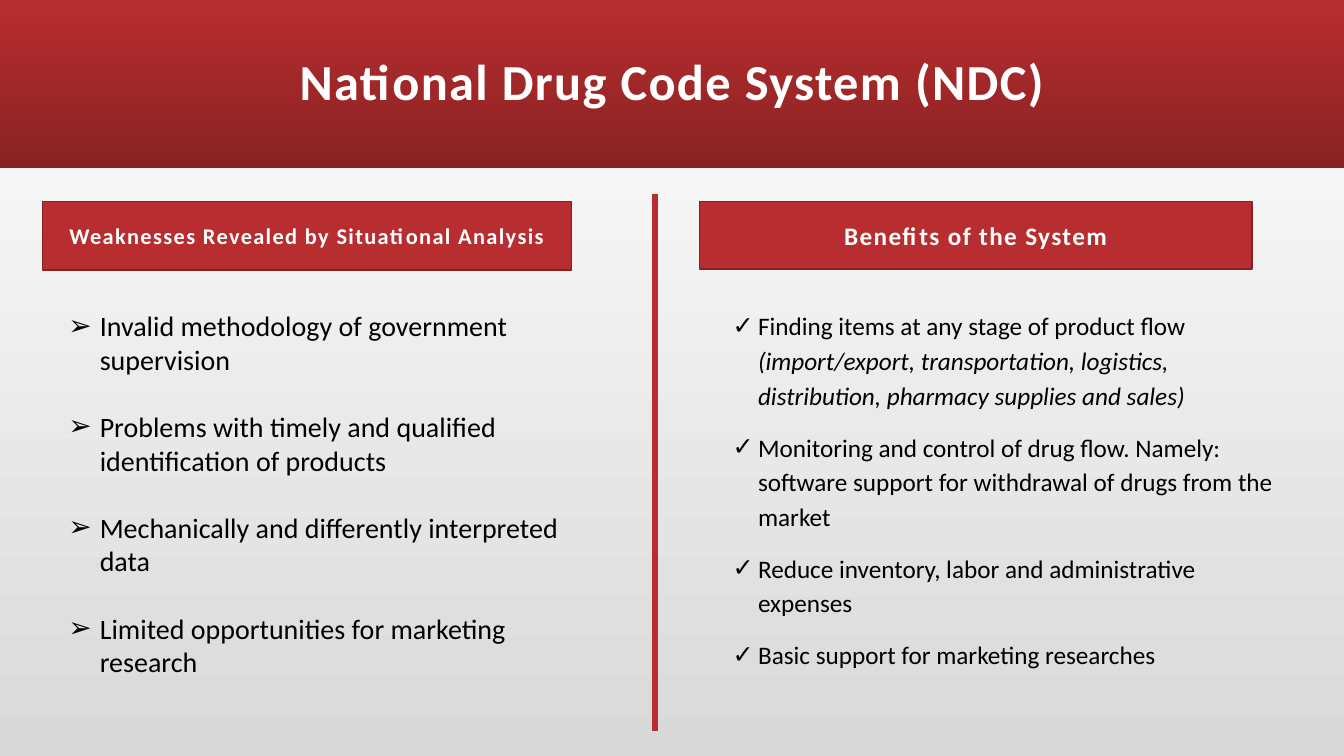
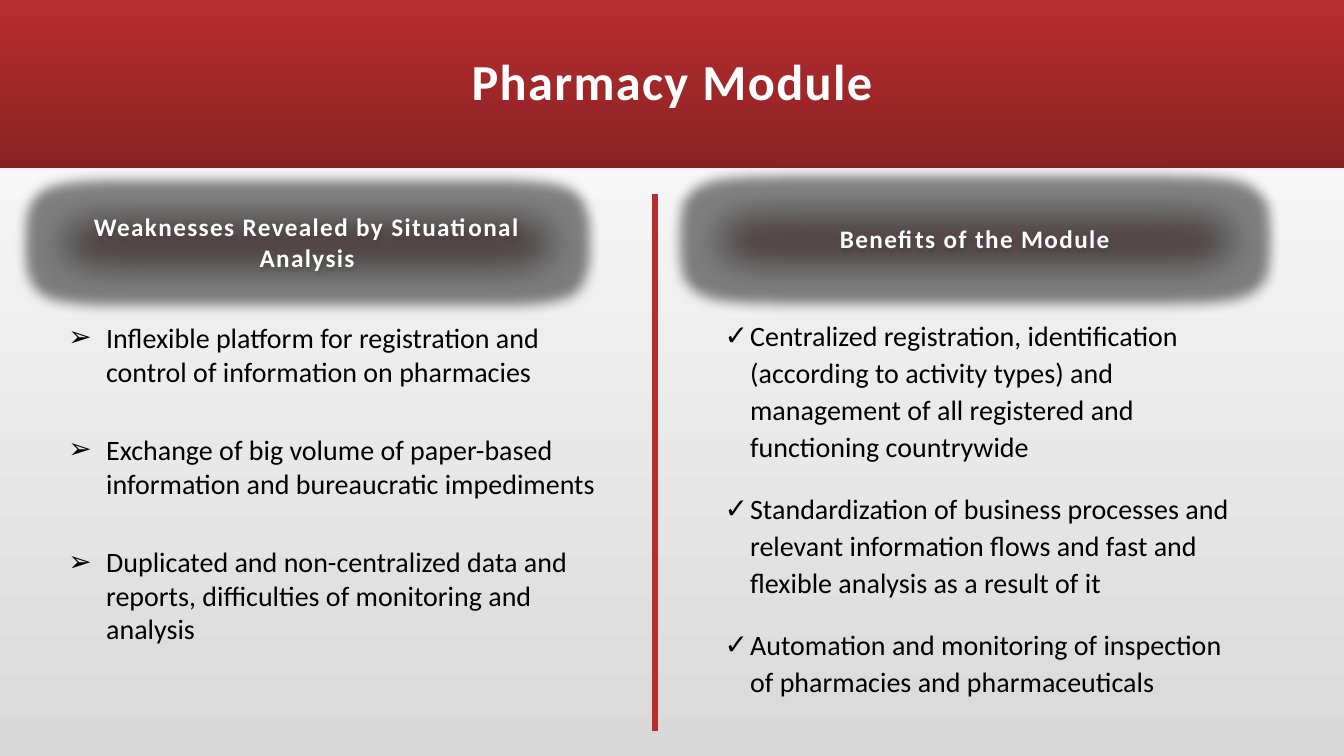
import pptx
import pptx.util
import pptx.dml.color
import pptx.enum.shapes
import pptx.enum.text
import pptx.oxml
import pptx.oxml.ns

Cm = pptx.util.Cm
Pt = pptx.util.Pt
FONT = "Calibri"
RED, DARK, EDGE = "B82D2F", "8A2223", "882123"
WHITE, BLACK, GREY = "FFFFFF", "000000", "D9D9D9"
WIDE, HIGH, BAND = 33.87, 19.05, 4.23
NS = pptx.oxml.ns.nsdecls("a")
CENTER = pptx.enum.text.PP_ALIGN.CENTER
MIDDLE = pptx.enum.text.MSO_ANCHOR.MIDDLE

HALO = """
<a:glow rad="228600"><a:srgbClr val="000000"><a:alpha val="40000"/></a:srgbClr></a:glow>
<a:outerShdw blurRad="44450" dist="27940" dir="5400000" algn="ctr">
<a:srgbClr val="000000"><a:alpha val="32000"/></a:srgbClr></a:outerShdw>
<a:softEdge rad="317500"/>"""

PAGES = [
    {
        "title": "National Drug Code System (NDC)",
        "halo": False,
        "heads": [
            ("Weaknesses Revealed by Situational Analysis", (1.07, 5.08, 13.34, 1.73), 16),
            ("Benefits of the System", (17.63, 5.08, 13.92, 1.7), 18),
        ],
        "lists": [
            {
                "box": (1.47, 7.65, 12.9, 9.65),
                "look": {"mark": "➢", "size": 20, "indent": 0.79, "gap": 24, "lead": 1},
                "items": [
                    "Invalid methodology of government supervision",
                    "Problems with timely and qualified identification of products",
                    "Mechanically and differently interpreted data",
                    "Limited opportunities for marketing research",
                ],
            },
            {
                "box": (18.21, 7.59, 14.17, 10.19),
                "look": {"mark": "✓", "size": 18, "indent": 0.64, "gap": 12, "lead": 1.15},
                "items": [
                    ("Finding items at any stage of product flow ",
                     "(import/export, transportation, logistics, distribution, "
                     "pharmacy supplies and sales)"),
                    "Monitoring and control of drug flow. Namely: software support "
                    "for withdrawal of drugs from the market",
                    "Reduce inventory, labor and administrative expenses",
                    "Basic support for marketing researches",
                ],
            },
        ],
    },
    {
        "title": "Pharmacy Module",
        "halo": True,
        "heads": [
            ("Weaknesses Revealed by Situational Analysis", (1.07, 5.16, 13.34, 1.88), 18),
            ("Benefits of the Module", (17.6, 5.08, 13.94, 1.88), 18),
        ],
        "lists": [
            {
                "box": (1.47, 7.95, 13.79, 10.97),
                "look": {"mark": "➢", "size": 20, "indent": 0.95, "gap": 32, "lead": 1},
                "items": [
                    "Inflexible platform for registration and control of information "
                    "on pharmacies",
                    "Exchange of big volume of paper-based information and "
                    "bureaucratic impediments",
                    "Duplicated and non-centralized data and reports, difficulties "
                    "of monitoring and analysis",
                ],
            },
            {
                "box": (18.01, 7.82, 13.69, 10.16),
                "look": {"mark": "✓", "size": 20, "indent": 0.64, "gap": 18, "lead": 1.1},
                "items": [
                    "Centralized registration, identification (according to activity "
                    "types) and management of all registered and functioning countrywide",
                    "Standardization of business processes and relevant information "
                    "flows and fast and flexible analysis as a result of it",
                    "Automation and monitoring of inspection of pharmacies and "
                    "pharmaceuticals",
                ],
            },
        ],
    },
]


def color(code):
    return pptx.dml.color.RGBColor.from_string(code)


def place(shape, box):
    shape.left, shape.top, shape.width, shape.height = map(Cm, box)


def shade(fill, first, last, angle):
    """Fill with a two-stop gradient; the angle runs counter-clockwise."""
    fill.gradient()
    fill.gradient_angle = angle
    for stop, code in zip(fill.gradient_stops, (first, last)):
        stop.color.rgb = color(code)


def style(para, size, code, bold=False):
    for run in para.runs:
        font = run.font
        font.name, font.size, font.bold = FONT, Pt(size), bold
        font.color.rgb = color(code)


def caption(frame, text, size):
    """Write centred, bold, letter-spaced white text."""
    frame.text = text
    frame.word_wrap = True
    frame.vertical_anchor = MIDDLE
    para = frame.paragraphs[0]
    para.alignment = CENTER
    style(para, size, WHITE, True)
    for run in para.runs:
        run.font._element.set("spc", "100")
    return para


def add_rect(slide, box):
    kind = pptx.enum.shapes.MSO_SHAPE.RECTANGLE
    rect = slide.shapes.add_shape(kind, *map(Cm, box))
    rect.shadow.inherit = False
    rect.line.fill.background()
    return rect


def effects(shape, inner=""):
    """Append an effect list to a shape that has none."""
    xml = f"<a:effectLst {NS}>{inner}</a:effectLst>"
    shape.element.spPr.append(pptx.oxml.parse_xml(xml))


def add_head(slide, text, box, size, halo):
    head = add_rect(slide, box)
    head.fill.solid()
    head.fill.fore_color.rgb = color(RED)
    if halo:
        props = head.element.spPr
        props.remove(props.find(pptx.oxml.ns.qn("a:effectLst")))
        effects(head, HALO)
    else:
        head.line.color.rgb = color(EDGE)
        head.line.width = Pt(1)
    caption(head.text_frame, text, size)


def add_rule(slide):
    kind = pptx.enum.shapes.MSO_CONNECTOR.STRAIGHT
    rule = slide.shapes.add_connector(kind, Cm(16.51), Cm(4.9), Cm(16.51), Cm(18.42))
    rule.line.color.rgb = color(RED)
    rule.line.width = Pt(4)
    effects(rule)


def bullet(para, mark, indent):
    props = para._p.get_or_add_pPr()
    props.set("marL", str(Cm(indent)))
    props.set("indent", str(-Cm(indent)))
    for tag in ('buFont {} typeface="Arial"', 'buChar {} char="' + mark + '"'):
        props.append(pptx.oxml.parse_xml(f"<a:{tag.format(NS)}/>"))


def fill_list(holder, box, look, items):
    """Fill a body placeholder; a tuple item ends in italics."""
    place(holder, box)
    frame = holder.text_frame
    frame.word_wrap = True
    frame.auto_size = pptx.enum.text.MSO_AUTO_SIZE.NONE
    for num, item in enumerate(items):
        para = frame.add_paragraph() if num else frame.paragraphs[0]
        parts = item if isinstance(item, tuple) else (item,)
        for part in parts:
            para.add_run().text = part
        style(para, look["size"], BLACK)
        for run in para.runs[1:]:
            run.font.italic = True
        para.line_spacing = look["lead"]
        para.space_before = Pt(look["gap"] if num else 0)
        bullet(para, look["mark"], look["indent"])


def set_master(deck, layout, slide):
    """Give the master its background and title band."""
    master = deck.slide_master
    shade(master.background.fill, GREY, WHITE, 90)
    band = add_rect(slide, (0, 0, WIDE, BAND))
    shade(band.fill, RED, DARK, 270)
    master.placeholders[0].element.addprevious(band.element)
    place(layout.placeholders[0], (2.97, 0, 27.94, BAND))


def fill_page(slide, page):
    title = caption(slide.shapes.title.text_frame, page["title"], 36)
    title.line_spacing = 0.9
    add_rule(slide)
    for text, box, size in page["heads"]:
        add_head(slide, text, box, size, page["halo"])
    for idx, part in enumerate(page["lists"], 1):
        fill_list(slide.placeholders[idx], **part)


def main():
    deck = pptx.Presentation()
    deck.slide_width, deck.slide_height = Cm(WIDE), Cm(HIGH)
    layout = deck.slide_layouts.get_by_name("Two Content")
    slides = [deck.slides.add_slide(layout) for page in PAGES]
    set_master(deck, layout, slides[0])
    for slide, page in zip(slides, PAGES):
        fill_page(slide, page)
    deck.save("out.pptx")


if __name__ == "__main__":
    main()
